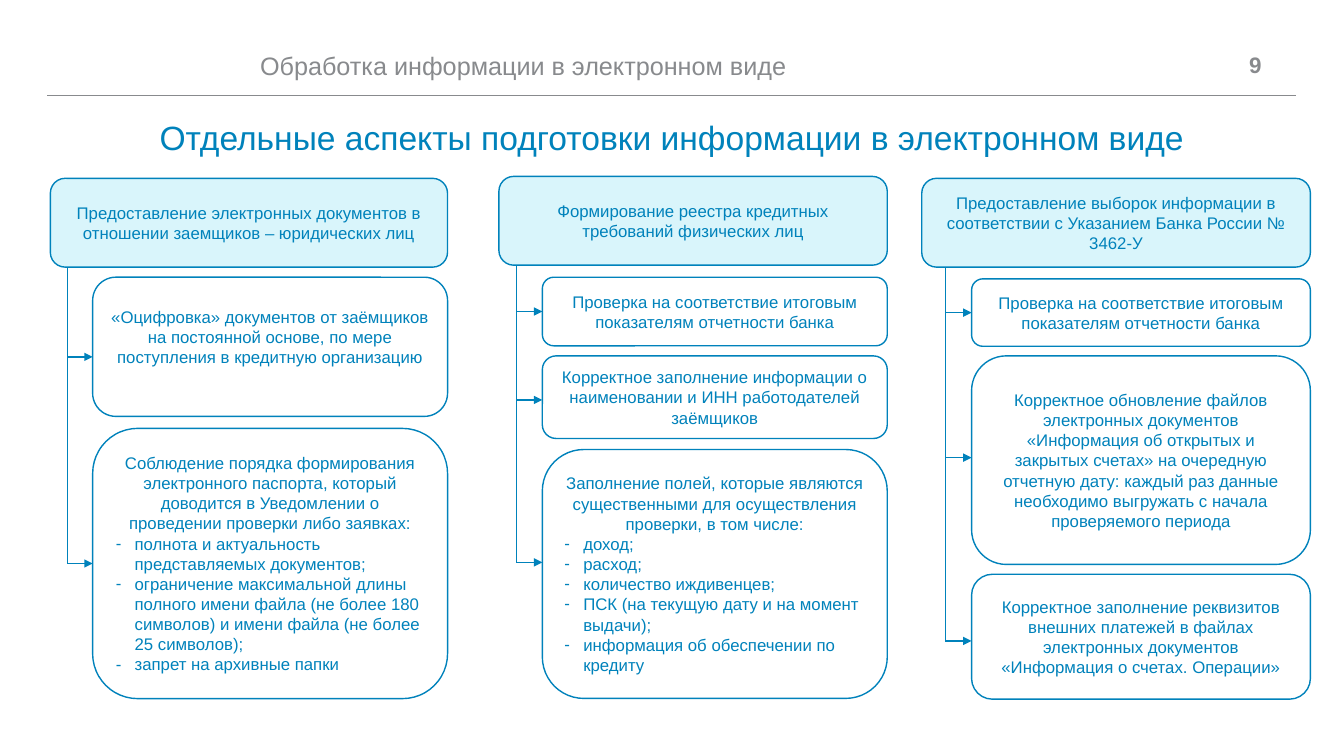
"""Build the slide on preparing information in electronic form."""
from dataclasses import dataclass

import pptx
import pptx.dml.color
import pptx.enum.shapes
import pptx.enum.text
import pptx.oxml.xmlchemy
import pptx.util

Pt = pptx.util.Pt
Align = pptx.enum.text.PP_ALIGN
Anchor = pptx.enum.text.MSO_ANCHOR
BLUE = pptx.dml.color.RGBColor(0x00, 0x82, 0xBB)
PALE = pptx.dml.color.RGBColor(0xD9, 0xF5, 0xFB)
WHITE = pptx.dml.color.RGBColor(0xFF, 0xFF, 0xFF)
GREY = pptx.dml.color.RGBColor(0x88, 0x8A, 0x8D)
FONT = "Arial"
HANG = 13.5
HEAD_HEIGHT = 63.4
LINE_HEIGHT = 13.8


@dataclass
class Card:
    """A box under a column head; shift moves its arrow off the middle."""
    top: float
    height: float
    text: str
    shift: float = 0
    items: tuple = ()
    extra_bottom: float = 0


CHECK = "Проверка на соответствие итоговым показателям отчетности банка"
COLUMNS = [
    ((36, 127.4, 283.7), 12.2, 30.2,
     "Предоставление электронных документов в отношении заемщиков – юридических лиц",
     [Card(198, 99.4, "«Оцифровка» документов от заёмщиков на постоянной основе, "
           "по мере поступления в кредитную организацию", 7.2, extra_bottom=LINE_HEIGHT),
      Card(306, 193, "Соблюдение порядка формирования электронного паспорта, который "
           "доводится в Уведомлении о проведении проверки либо заявках:",
           items=("полнота и актуальность представляемых документов;",
                  "ограничение максимальной длины полного имени файла (не более 180 "
                  "символов) и имени файла (не более 25 символов);",
                  "запрет на архивные папки"))]),
    ((356.4, 126, 277.4), 12.4, 31,
     "Формирование реестра кредитных требований физических лиц",
     [Card(198, 49, CHECK),
      Card(254.2, 59, "Корректное заполнение информации о наименовании и ИНН "
           "работодателей заёмщиков", 2),
      Card(321.1, 177.8, "Заполнение полей, которые являются существенными для "
           "осуществления проверки, в том числе:", -8.3,
           ("доход;", "расход;", "количество иждивенцев;",
            "ПСК (на текущую дату и на момент выдачи);",
            "информация об обеспечении по кредиту"))]),
    ((658.4, 127.4, 277.6), 16.8, 35.6,
     "Предоставление выборок информации в соответствии с Указанием Банка России № 3462-У",
     [Card(199.2, 48.2, CHECK),
      Card(254.2, 149, "Корректное обновление файлов электронных документов "
           "«Информация об открытых и закрытых счетах» на очередную отчетную дату: "
           "каждый раз данные необходимо выгружать с начала проверяемого периода", -1.8),
      Card(410.2, 89.2, "Корректное заполнение реквизитов внешних платежей в файлах "
           "электронных документов «Информация о счетах. Операции»", 3)]),
]


def add_element(parent, tag, **attributes):
    """Append a drawing element to a parent element."""
    element = pptx.oxml.xmlchemy.OxmlElement("a:" + tag)
    for name, value in attributes.items():
        element.set(name, value)
    parent.append(element)


def write_para(para, text, size, color, align, bold=False):
    """Add one styled run to a paragraph."""
    para.alignment = align
    span = para.add_run()
    span.text = text
    span.font.name = FONT
    span.font.size = Pt(size)
    span.font.bold = bold
    span.font.color.rgb = color


def make_bullet(para):
    """Give a paragraph a hanging dash."""
    settings = para._p.get_or_add_pPr()
    settings.set("marL", str(int(Pt(HANG))))
    settings.set("indent", str(-int(Pt(HANG))))
    add_element(settings, "buFont", typeface=FONT)
    add_element(settings, "buChar", char="-")


def add_label(page, box, text, size, color, align, anchor, bold=False):
    """Place a single-paragraph text box without insets and return its paragraph."""
    frame = page.shapes.add_textbox(*map(Pt, box)).text_frame
    frame.word_wrap = True
    frame.vertical_anchor = anchor
    frame.margin_left = frame.margin_right = frame.margin_top = frame.margin_bottom = 0
    write_para(frame.paragraphs[0], text, size, color, align, bold)
    return frame.paragraphs[0]


def add_line(page, start, end, color, width, arrow=False):
    """Draw a straight line, with an arrowhead at its end if asked."""
    line = page.shapes.add_connector(
        pptx.enum.shapes.MSO_CONNECTOR.STRAIGHT, *map(Pt, start + end))
    line.line.color.rgb = color
    line.line.width = Pt(width)
    properties = line._element.spPr
    if arrow:
        add_element(properties.get_or_add_ln(), "tailEnd", type="triangle")
    add_element(properties, "effectLst")
    return line


def add_rounded(page, box, fill, text, items=(), extra_bottom=0):
    """Draw a rounded box with centred text and optional dashed items."""
    shape = page.shapes.add_shape(
        pptx.enum.shapes.MSO_SHAPE.ROUNDED_RECTANGLE, *map(Pt, box))
    shape.shadow.inherit = False
    shape.fill.solid()
    shape.fill.fore_color.rgb = fill
    shape.line.color.rgb = BLUE
    shape.line.width = Pt(1)
    frame = shape.text_frame
    frame.word_wrap = True
    frame.vertical_anchor = Anchor.MIDDLE
    frame.margin_bottom = Pt(3.6 + extra_bottom)
    write_para(frame.paragraphs[0], text, 12, BLUE, Align.CENTER)
    for item in items:
        para = frame.add_paragraph()
        make_bullet(para)
        write_para(para, item, 12, BLUE, Align.LEFT)
    return shape


def add_header(page, box):
    """Place the running title, page number, rule and slide title."""
    left, top, width = box
    add_line(page, (left, top + 34.6), (left + width, top + 34.6), GREY, 0.5)
    add_label(page, (left + 152, top, 664.6, 25.2),
              "Обработка информации в электронном виде", 18, GREY,
              Align.LEFT, Anchor.MIDDLE)
    add_label(page, (left + width - 58.3, top, 58.3, 25.2), "9", 16, GREY,
              Align.CENTER, Anchor.MIDDLE, True)
    title = add_label(page, (left, top + 53.3, width, 33.8),
                      "Отдельные аспекты подготовки информации в электронном виде",
                      24, BLUE, Align.CENTER, Anchor.TOP)
    title.line_spacing = 0.9


def add_column(page, box, rail_offset, indent, heading, cards):
    """Place a column head, its cards and the arrows that lead to them."""
    left, top, width = box
    rail = left + rail_offset
    add_rounded(page, (left, top, width, HEAD_HEIGHT), PALE, heading)
    for card in cards:
        shape = add_rounded(page, (left + indent, card.top, width - indent, card.height),
                            WHITE, card.text, card.items, card.extra_bottom)
        level = card.top + card.height / 2 + card.shift
        arrow = add_line(page, (rail, level), (left + indent, level), BLUE, 1, True)
        if not card.shift:
            arrow.end_connect(shape, 1)
    add_line(page, (rail, top + HEAD_HEIGHT), (rail, level), BLUE, 1)


def main():
    """Build and save the deck."""
    deck = pptx.Presentation()
    deck.slide_width, deck.slide_height = Pt(960), Pt(540)
    page = deck.slides.add_slide(deck.slide_layouts[6])
    add_header(page, (33.8, 33.8, 892.1))
    for column in COLUMNS:
        add_column(page, *column)
    deck.save("out.pptx")


if __name__ == "__main__":
    main()
